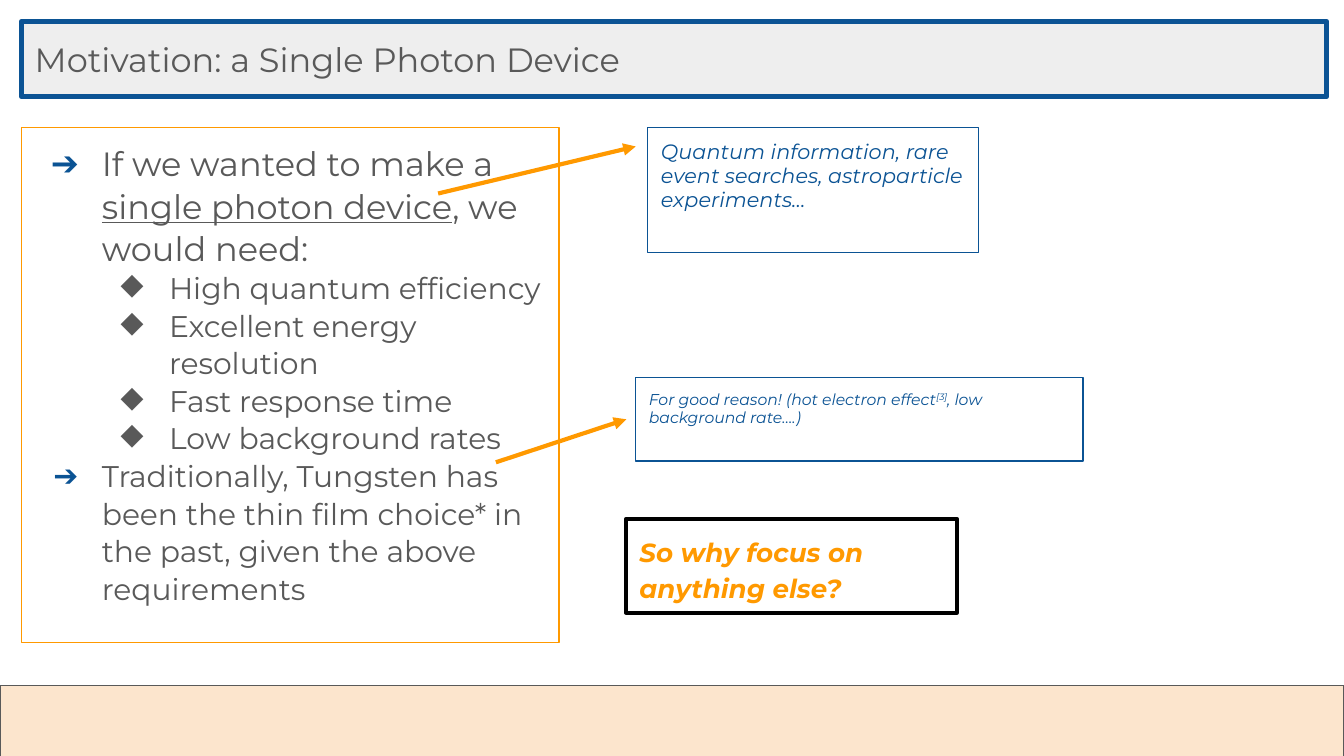
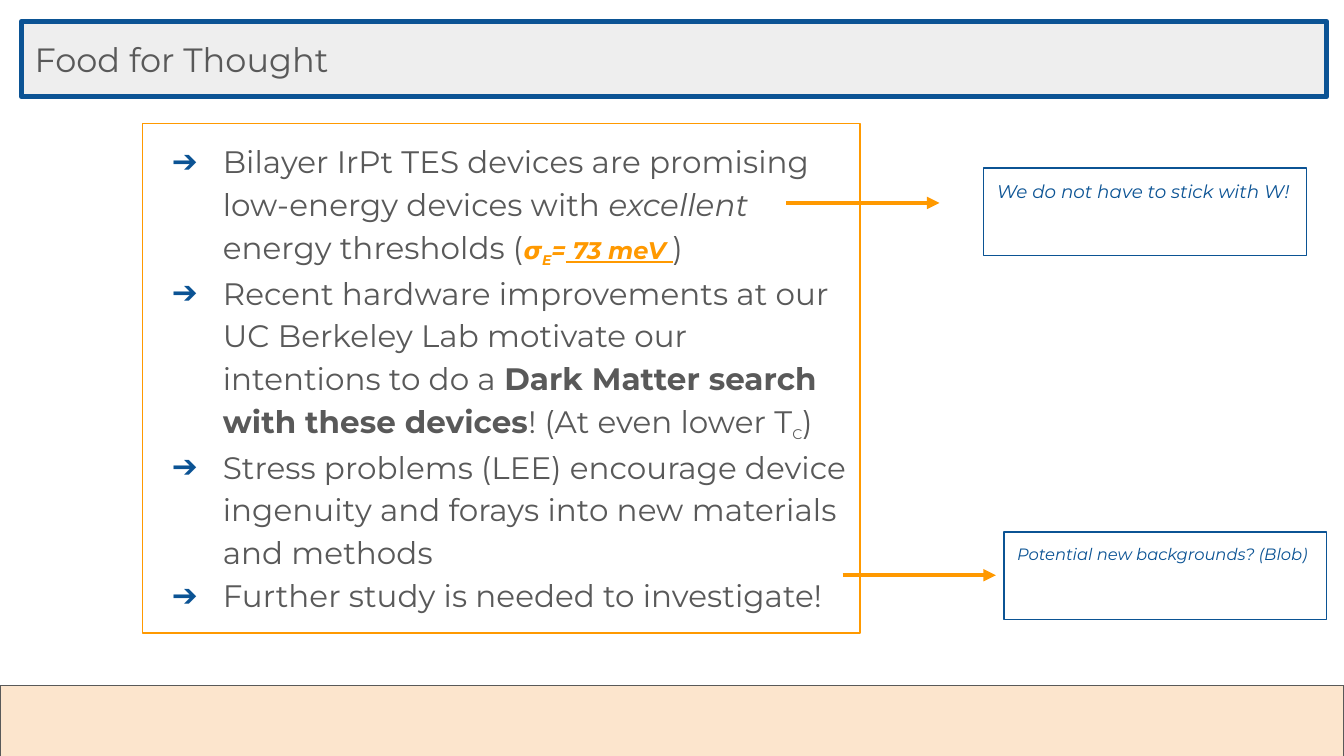
from dataclasses import dataclass

from lxml.etree import SubElement
from pptx import Presentation
from pptx.dml.color import RGBColor
from pptx.enum.shapes import MSO_CONNECTOR, MSO_SHAPE
from pptx.enum.text import MSO_ANCHOR, PP_ALIGN
from pptx.oxml.ns import qn
from pptx.util import Inches, Pt


@dataclass(frozen=True)
class Theme:
    font: str = "Montserrat"
    gray: str = "595959"
    blue: str = "0B5394"
    gold: str = "FF9900"
    black: str = "000000"
    pale: str = "EEEEEE"
    peach: str = "FCE5CD"
    title: float = 18
    lead: float = 18
    sub: float = 16
    body: float = 16.65
    small: float = 12.9
    call: float = 14
    thin: float = 0.75
    mid: float = 2.25
    thick: float = 3


THEME = Theme()


def color(code):
    return RGBColor.from_string(code)


class Deck:
    def __init__(self, theme):
        self.theme = theme
        self.file = Presentation()
        self.file.slide_width = Inches(10)
        self.file.slide_height = Inches(10) * 9 // 16
        self.slide = None

    def page(self, title):
        """Start a slide with its footer band and title bar."""
        t = self.theme
        self.slide = self.file.slides.add_slide(self.file.slide_layouts[6])
        self.box((0, 5.1, 10, 0.56), t.gray, fill=t.peach)
        frame = self.box((0.16, 0.16, 9.71, 0.56), t.blue, t.thick, t.pale)
        frame.vertical_anchor = MSO_ANCHOR.MIDDLE
        self.text(frame.paragraphs[0], [title], t.title, t.gray)

    def box(self, place, line, width=THEME.thin, fill=None):
        """Draw a framed rectangle and return its text frame."""
        shape = self.slide.shapes.add_shape(
            MSO_SHAPE.RECTANGLE, *map(Inches, place))
        shape.shadow.inherit = False
        shape.line.color.rgb = color(line)
        shape.line.width = Pt(width)
        if fill:
            shape.fill.solid()
            shape.fill.fore_color.rgb = color(fill)
        else:
            shape.fill.background()
        frame = shape.text_frame
        frame.word_wrap = True
        frame.vertical_anchor = MSO_ANCHOR.TOP
        frame.margin_left = frame.margin_right = Inches(0.1)
        frame.margin_top = frame.margin_bottom = Inches(0.1)
        return frame

    def text(self, para, parts, size, ink, **look):
        """Fill a paragraph; a part is a string or (string, run changes)."""
        para.alignment = PP_ALIGN.LEFT
        self.style(para.font, size=size, ink=ink, **look)
        para.font.name = self.theme.font
        for part in parts:
            words, change = (part, {}) if isinstance(part, str) else part
            run = para.add_run()
            run.text = words
            self.style(run.font, **change)

    def style(self, font, size=None, ink=None, base=None, **look):
        if size:
            font.size = Pt(size)
        if ink:
            font.color.rgb = color(ink)
        for name, value in look.items():
            setattr(font, name, value)
        if base:
            font._element.set("baseline", str(base * 1000))

    def note(self, place, parts, size):
        t = self.theme
        para = self.box(place, t.blue).paragraphs[0]
        self.space(para, 0.95)
        self.text(para, parts, size, t.blue, italic=True)

    def call(self, place, words):
        t = self.theme
        para = self.box(place, t.black, t.mid).paragraphs[0]
        self.space(para, 1.15)
        self.text(para, [words], t.call, t.gold, bold=True, italic=True)

    def space(self, para, lines):
        para.line_spacing = lines
        para.space_after = Pt(12)

    def points(self, place, items, lines):
        """Draw the bulleted box; an item is (level, size, parts)."""
        t = self.theme
        frame = self.box(place, t.gold)
        for i, (level, size, parts) in enumerate(items):
            para = frame.add_paragraph() if i else frame.paragraphs[0]
            para.level = level
            para.line_spacing = lines
            self.mark(para, level, 0.38 if size > t.sub else 0.36)
            self.text(para, parts, size, t.gray)

    def mark(self, para, level, hang):
        sign, ink = [("➔", self.theme.blue), ("◆", self.theme.gray)][level]
        props = para._p.get_or_add_pPr()
        props.set("marL", str(Inches(0.5 * (level + 1))))
        props.set("indent", str(-Inches(hang)))
        tint = SubElement(props, qn("a:buClr"))
        SubElement(tint, qn("a:srgbClr"), val=ink)
        if level == 0:
            SubElement(props, qn("a:buFont"), typeface=self.theme.font)
        SubElement(props, qn("a:buChar"), char=sign)

    def arrow(self, *ends):
        link = self.slide.shapes.add_connector(
            MSO_CONNECTOR.STRAIGHT, *map(Inches, ends))
        link.line.color.rgb = color(self.theme.gold)
        link.line.width = Pt(self.theme.mid)
        SubElement(link.line._get_or_add_ln(), qn("a:tailEnd"),
                   type="triangle")
        SubElement(link._element.spPr, qn("a:effectLst"))


def motive(deck):
    t = deck.theme
    deck.page("Motivation: a Single Photon Device")
    needs = ["High quantum efficiency", "Excellent energy resolution",
             "Fast response time", "Low background rates"]
    deck.points((0.16, 0.95, 4, 3.83), [
        (0, t.lead, ["If we wanted to make a ",
                     ("single photon device", {"underline": True}),
                     ", we would need:"]),
        *[(1, t.sub, [need]) for need in needs],
        (0, t.sub, ["Traditionally, Tungsten has been the thin film choice* "
                    "in the past, given the above requirements"]),
    ], 1.05)
    deck.note((4.82, 0.95, 2.46, 0.93),
              ["Quantum information, rare event searches, "
               "astroparticle experiments…"], 11.1)
    deck.arrow(3.26, 1.44, 4.73, 1.09)
    deck.arrow(3.69, 3.44, 4.66, 3.12)
    deck.note((4.73, 2.81, 3.33, 0.62),
              ["For good reason! (hot electron effect", ("[3]", {"base": 30}),
               ", low background rate….)"], 8.4)
    deck.call((4.66, 3.86, 2.46, 0.7), "So why focus on anything else?")


def food(deck):
    t = deck.theme
    deck.page("Food for Thought")
    gold = {"size": t.small, "ink": t.gold, "bold": True, "italic": True}
    items = [
        ["Bilayer IrPt TES devices are promising low-energy devices with ",
         ("excellent", {"italic": True}), " energy thresholds (",
         ("𝞼", gold), ("E", gold | {"base": -25}), ("=", gold),
         (" 73 meV ", gold | {"underline": True}), ")"],
        ["Recent hardware improvements at our UC Berkeley Lab motivate "
         "our intentions to do a ",
         ("Dark Matter search with these devices", {"bold": True}),
         "! (At even lower T", ("C", {"size": t.small, "base": -25}), ")"],
        ["Stress problems (LEE) encourage device ingenuity and forays "
         "into new materials and methods"],
        ["Further study is needed to investigate!"],
    ]
    deck.points((1.06, 0.92, 5.34, 3.79),
                [(0, t.body, parts) for parts in items], 1.15)
    deck.note((7.32, 1.25, 2.4, 0.65),
              ["We do not have to stick with W!"], 9.8)
    deck.arrow(5.85, 1.51, 6.99, 1.51)
    deck.arrow(6.27, 4.28, 7.41, 4.28)
    deck.note((7.47, 3.96, 2.4, 0.65),
              ["Potential new backgrounds? (Blob)"], 8.8)


def main():
    deck = Deck(THEME)
    motive(deck)
    food(deck)
    deck.file.save("out.pptx")


if __name__ == "__main__":
    main()
